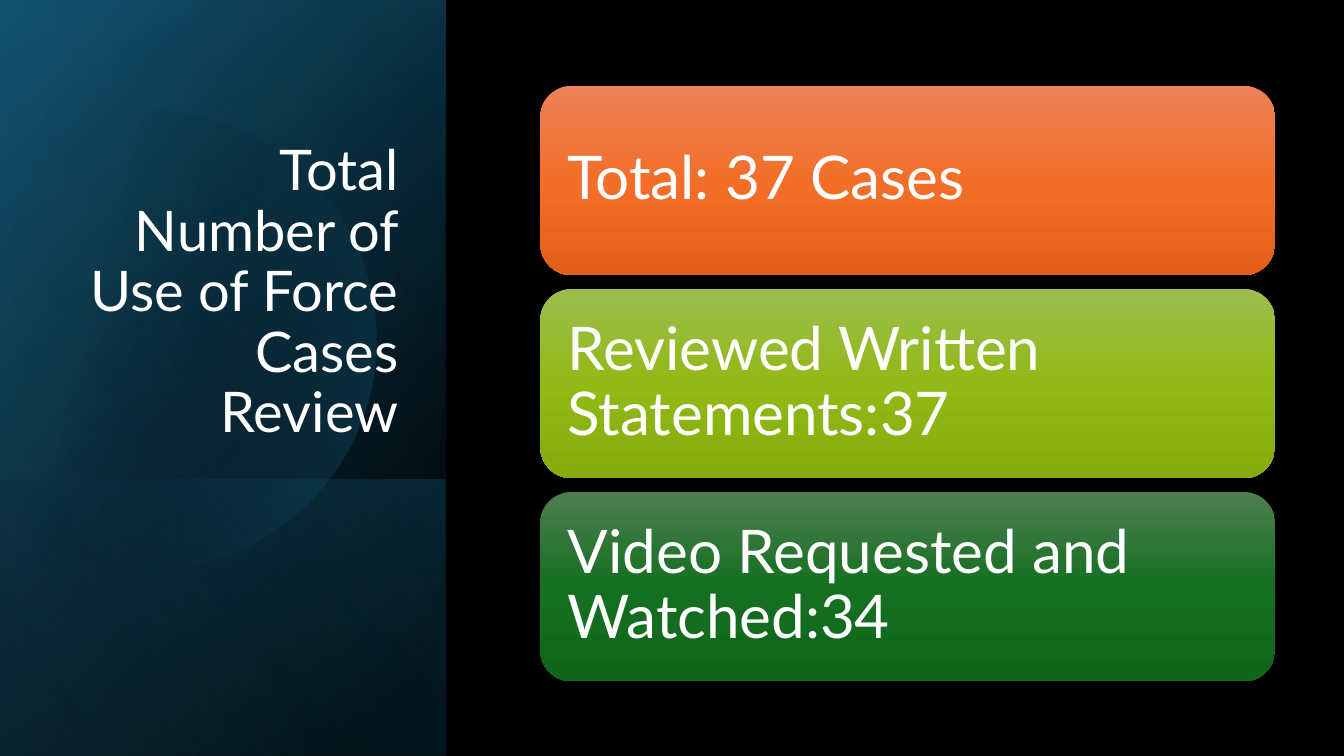
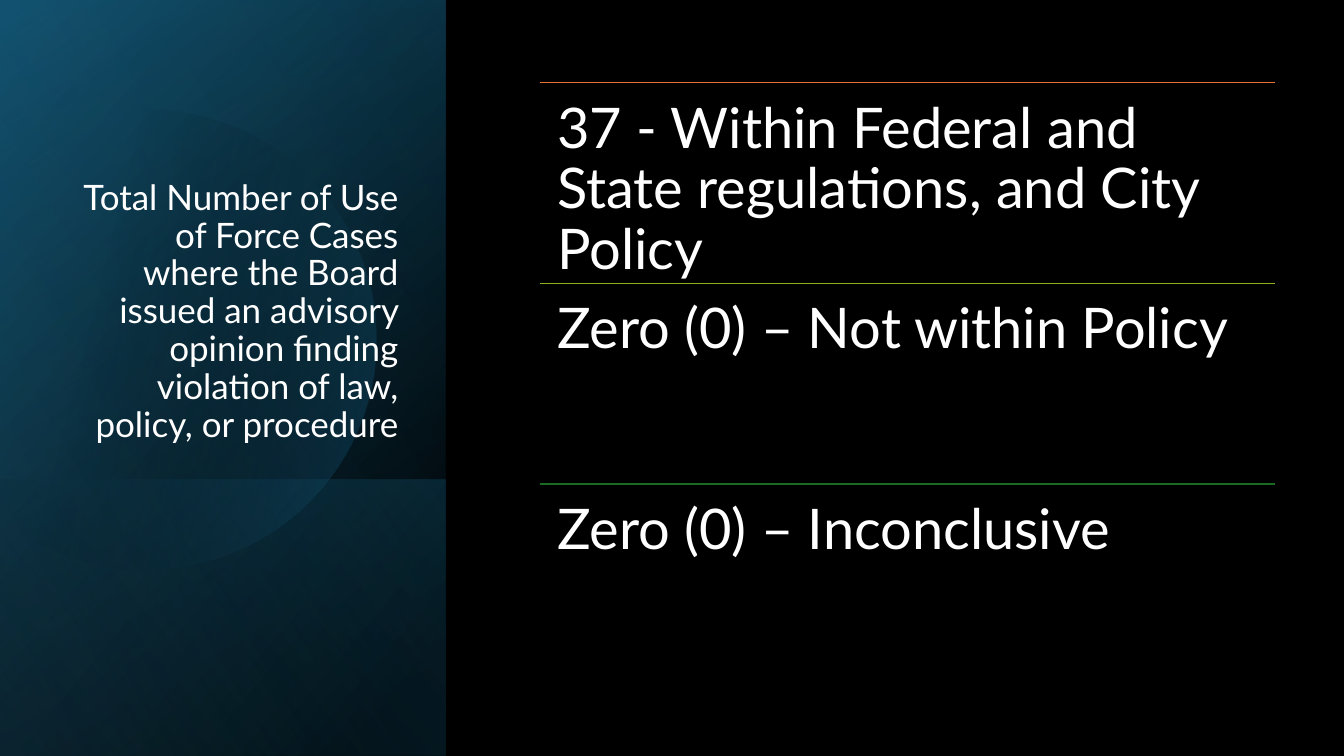
"""Build two slides on the review of use of force cases."""
import math

import lxml.etree
import pptx
import pptx.dml.color
import pptx.enum.shapes
import pptx.enum.text
import pptx.oxml.ns
import pptx.util

Inches = pptx.util.Inches
Pt = pptx.util.Pt
qn = pptx.oxml.ns.qn
SHAPES = pptx.enum.shapes.MSO_SHAPE
ANCHOR = pptx.enum.text.MSO_ANCHOR
ALIGN = pptx.enum.text.PP_ALIGN

COLORS = {
    "black": "000000", "white": "FFFFFF",
    "navy": "104862", "teal": "156082", "sky": "46B1E1",
    "orange_light": "ED8257", "orange": "F26E29", "orange_dark": "E25F1A",
    "lime_light": "9CBD4E", "lime": "92B916", "lime_dark": "85AB0D",
    "green_light": "4D7E50", "green": "156F21", "green_dark": "0F661B",
    "orange_rule": "E97132", "lime_rule": "8EB21E", "green_rule": "196B24",
}
WIDTH, HEIGHT = 40 / 3, 7.5
PANEL = 4.42
LEFT, COLUMN = 5.36, 7.29
CARD_TOP, CARD_HEIGHT, CARD_PITCH = 0.85, 1.88, 2.015
RULE_TOP, RULE_PITCH = 0.82, 1.99


def paint_gradient(shape, stops, angle):
    """Fill a shape with (position, colour, opacity) stops, angle clockwise."""
    shape.shadow.inherit = False
    shape.line.fill.background()
    shape.fill.gradient()
    shape.fill.gradient_angle = 360 - angle
    stop_list = next(shape._element.iter(qn("a:gsLst")))
    for old_stop in list(stop_list):
        stop_list.remove(old_stop)
    for position, color, opacity in stops:
        stop = lxml.etree.SubElement(stop_list, qn("a:gs"), pos=str(position * 1000))
        rgb = lxml.etree.SubElement(stop, qn("a:srgbClr"), val=COLORS[color])
        if opacity < 100:
            lxml.etree.SubElement(rgb, qn("a:alpha"), val=str(opacity * 1000))


def write_text(shape, text, size, anchor, align, margins):
    """Set one paragraph of white text; margins are (sides, top and bottom)."""
    frame = shape.text_frame
    frame.word_wrap = True
    frame.vertical_anchor = anchor
    frame.margin_left = frame.margin_right = Inches(margins[0])
    frame.margin_top = frame.margin_bottom = Inches(margins[1])
    paragraph = frame.paragraphs[0]
    paragraph.text = text
    paragraph.alignment = align
    paragraph.line_spacing = 0.9
    paragraph.font.name = "Lato"
    paragraph.font.size = Pt(size)
    paragraph.font.color.rgb = pptx.dml.color.RGBColor.from_string(COLORS["white"])


presentation = pptx.Presentation()
presentation.slide_width = Inches(WIDTH)
presentation.slide_height = Inches(HEIGHT)

base_layers = [
    (HEIGHT, [(8, "black", 100), (100, "navy", 100)], 50),
    (HEIGHT, [(0, "black", 0), (99, "teal", 46)], 30),
    (2.74, [(2, "teal", 29), (100, "black", 30)], 130),
]
top_layer = (HEIGHT, [(0, "black", 0), (99, "sky", 11)], 120)
disc_x, disc_y, disc_radius = 1.45, 3.37, 2.28
disc_cut = math.acos(-disc_x / disc_radius)
disc_angles = [disc_cut * step / 60 for step in range(-60, 61)]
disc_outline = [
    (Inches(disc_x + disc_radius * math.cos(a)), Inches(disc_y + disc_radius * math.sin(a)))
    for a in disc_angles
]

titles = [
    ("Total Number of Use of Force Cases Review", 40),
    ("Total Number of Use of Force Cases where the Board issued an advisory "
     "opinion finding violation of law, policy, or procedure", 25),
]
slides = []
for title, title_size in titles:
    slide = presentation.slides.add_slide(presentation.slide_layouts[6])
    slides.append(slide)
    slide.background.fill.solid()
    slide.background.fill.fore_color.rgb = pptx.dml.color.RGBColor.from_string(COLORS["black"])

    for layer in base_layers + ["disc", top_layer]:
        if layer == "disc":
            builder = slide.shapes.build_freeform(*disc_outline[0], scale=1.0)
            builder.add_line_segments(disc_outline[1:], close=True)
            disc = builder.convert_to_shape()
            paint_gradient(disc, [(29, "black", 0), (100, "teal", 43)], 14)
            continue
        length, stops, angle = layer
        band = slide.shapes.add_shape(
            SHAPES.RECTANGLE, Inches((PANEL - length) / 2),
            Inches(HEIGHT - (length + PANEL) / 2), Inches(length), Inches(PANEL))
        band.rotation = 90
        band._element.spPr.xfrm.set("flipH", "1")
        paint_gradient(band, stops, angle)

    heading = slide.shapes.add_textbox(Inches(0.64), Inches(1.84), Inches(3.41), Inches(2.62))
    write_text(heading, title, title_size, ANCHOR.BOTTOM, ALIGN.RIGHT, (0.1, 0.05))

totals_slide, findings_slide = slides

totals = [
    ("Total: 37 Cases", "orange"),
    ("Reviewed Written Statements:37", "lime"),
    ("Video Requested and Watched:34", "green"),
]
for row, (total, hue) in enumerate(totals):
    card = totals_slide.shapes.add_shape(
        SHAPES.ROUNDED_RECTANGLE, Inches(LEFT), Inches(CARD_TOP + row * CARD_PITCH),
        Inches(COLUMN), Inches(CARD_HEIGHT))
    paint_gradient(card, [(0, hue + "_light", 100), (50, hue, 100), (100, hue + "_dark", 100)], 90)
    write_text(card, total, 43, ANCHOR.MIDDLE, ALIGN.LEFT, (0.18, 0.18))

findings = [
    ("37 - Within Federal and State regulations, and City Policy", "orange_rule"),
    ("Zero (0) – Not within Policy", "lime_rule"),
    ("Zero (0) – Inconclusive", "green_rule"),
]
for row, (finding, color) in enumerate(findings):
    top = Inches(RULE_TOP + row * RULE_PITCH)
    rule = findings_slide.shapes.add_connector(
        pptx.enum.shapes.MSO_CONNECTOR.STRAIGHT, Inches(LEFT), top, Inches(LEFT + COLUMN), top)
    rule.line.width = Pt(1)
    rule.line.color.rgb = pptx.dml.color.RGBColor.from_string(COLORS[color])
    lxml.etree.SubElement(rule._element.spPr, qn("a:effectLst"))
    entry = findings_slide.shapes.add_textbox(Inches(LEFT), top, Inches(COLUMN), Inches(RULE_PITCH))
    write_text(entry, finding, 40, ANCHOR.TOP, ALIGN.LEFT, (0.17, 0.17))

presentation.save("out.pptx")
